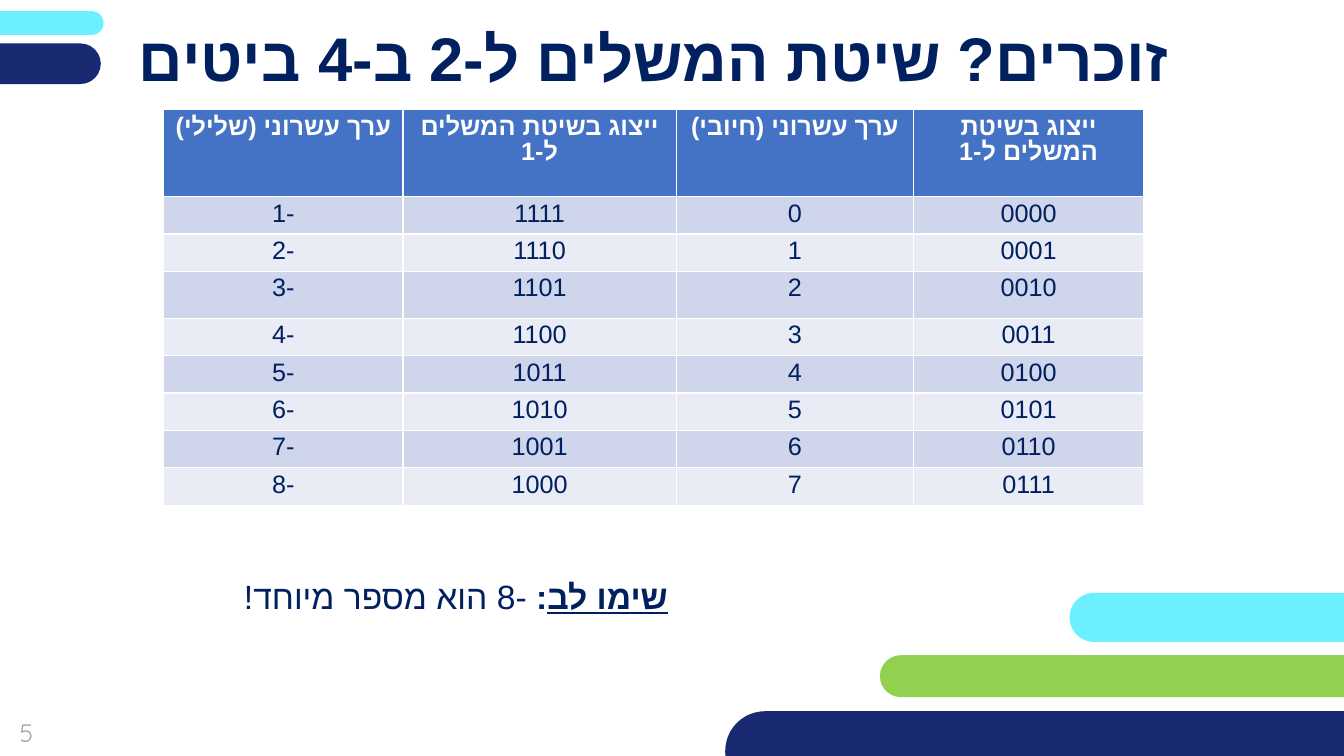
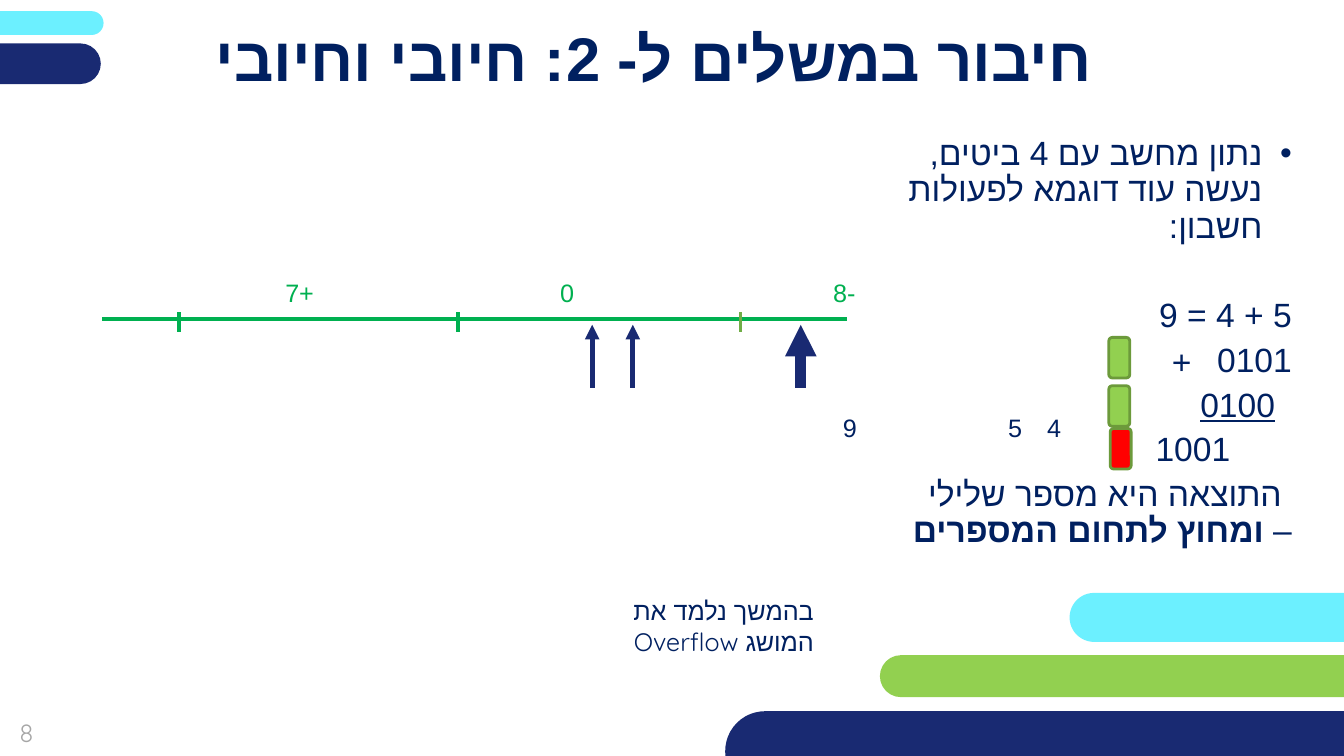
from pptx import Presentation
from pptx.dml.color import RGBColor
from pptx.enum.shapes import MSO_CONNECTOR, MSO_SHAPE
from pptx.enum.text import MSO_ANCHOR, MSO_AUTO_SIZE, PP_ALIGN
from pptx.oxml.ns import qn
from pptx.util import Pt
from lxml.etree import SubElement

COLORS = {
    "ink": "002060", "navy": "192A72", "cyan": "6CF0FF", "lime": "92D050",
    "moss": "6C9A3B", "red": "FF0000", "axis": "00B050", "olive": "70AD47",
    "gray": "A6A6A6", "white": "FFFFFF", "head": "4472C4",
    "odd": "CFD5EA", "even": "E9EBF5",
}
FONT = "Quicksand"
HEBREW = "Arial"
BANDS = [
    ("navy", 518, 508, 472, 57),
    ("cyan", 764, 423.5, 275, 35),
    ("cyan", -96, 8, 170, 17),
    ("navy", -162, 31, 234, 29),
    ("lime", 628.5, 468, 375, 30),
]


def color(name):
    return RGBColor.from_string(COLORS[name])


def style(para, size, tint="ink", bold=False, align=PP_ALIGN.RIGHT, rtl=True):
    para.alignment = align
    if rtl:
        para._p.get_or_add_pPr().set("rtl", "1")
    for run in para.runs:
        font = run.font
        font.name, font.size, font.bold = FONT, Pt(size), bold
        font.color.rgb = color(tint)
        SubElement(run._r.get_or_add_rPr(), qn("a:cs"), typeface=HEBREW)


def place(shape, box):
    shape.left, shape.top, shape.width, shape.height = map(Pt, box)


def add_text(slide, box, text, size, tint="ink", align=PP_ALIGN.RIGHT, rtl=True,
             anchor=MSO_ANCHOR.TOP):
    frame = slide.shapes.add_textbox(*map(Pt, box)).text_frame
    frame.word_wrap = True
    frame.vertical_anchor = anchor
    frame.text = text
    style(frame.paragraphs[0], size, tint, align=align, rtl=rtl)
    return frame


def add_label(slide, x, y, text, size=18, tint="ink"):
    add_text(slide, (x - 20, y - 15, 40, 30), text, size, tint,
             PP_ALIGN.CENTER, anchor=MSO_ANCHOR.MIDDLE)


def add_pill(slide, box, fill, line=None):
    pill = slide.shapes.add_shape(MSO_SHAPE.ROUNDED_RECTANGLE, *map(Pt, box))
    pill.shadow.inherit = False
    pill.fill.solid()
    pill.fill.fore_color.rgb = color(fill)
    if line:
        pill.line.color.rgb = color(line)
        pill.line.width = Pt(2)
    else:
        pill.line.fill.background()
    return pill


def add_line(slide, start, end, tint, width, arrow=False):
    line = slide.shapes.add_connector(
        MSO_CONNECTOR.STRAIGHT, *map(Pt, start + end))
    line.line.color.rgb = color(tint)
    line.line.width = Pt(width)
    if arrow:
        SubElement(line.line._get_or_add_ln(), qn("a:tailEnd"), type="triangle")
    SubElement(line._element.spPr, qn("a:effectLst"))


def add_slide(prs, layout, title, number):
    slide = prs.slides.add_slide(prs.slide_layouts[layout])
    for tint, *box in BANDS:
        add_pill(slide, box, tint).adjustments[0] = 0.5
    add_text(slide, (-13, 503, 64, 41), number, 18, "gray", PP_ALIGN.CENTER,
             False, MSO_ANCHOR.MIDDLE)
    head = slide.shapes.title
    place(head, (81, 12, 772, 57))
    frame = head.text_frame
    frame.auto_size = MSO_AUTO_SIZE.NONE
    frame.margin_left = frame.margin_right = 0
    frame.margin_top = frame.margin_bottom = 0
    frame.vertical_anchor = MSO_ANCHOR.MIDDLE
    frame.text = title
    style(frame.paragraphs[0], 44, bold=True, align=PP_ALIGN.CENTER)
    return slide


def add_values(slide, box):
    header = ["ערך עשרוני (שלילי)", "ייצוג בשיטת המשלים ל-1",
              "ערך עשרוני (חיובי)", "ייצוג בשיטת המשלים ל-1"]
    rows = [header] + [
        [f"-{n + 1}", f"{15 - n:04b}", str(n), f"{n:04b}"] for n in range(8)]
    table = slide.shapes.add_table(len(rows), 4, *map(Pt, box)).table
    for col, width in zip(table.columns, (0.244, 0.279, 0.242, 0.235)):
        col.width = Pt(round(box[2] * width, 1))
    for i, row in enumerate(rows):
        table.rows[i].height = Pt({0: 62, 3: 33.6}.get(i, 25.4))
        fill = "head" if i == 0 else "odd" if i % 2 else "even"
        for j, text in enumerate(row):
            cell = table.cell(i, j)
            cell.fill.solid()
            cell.fill.fore_color.rgb = color(fill)
            cell.text = text
            para = cell.text_frame.paragraphs[0]
            para.line_spacing = 0.9
            style(para, 18, "ink" if i else "white", i == 0, PP_ALIGN.CENTER)


def add_note(slide, box):
    para = add_text(slide, box, "שימו לב", 24).paragraphs[0]
    for text in (": ", "-8 הוא מספר מיוחד!"):
        para.add_run().text = text
    style(para, 24)
    lead, colon, rest = para.runs
    lead.font.bold = colon.font.bold = True
    lead.font.underline = True


def add_sum(slide, box):
    body = slide.placeholders[1]
    place(body, box)
    frame = body.text_frame
    frame.auto_size = MSO_AUTO_SIZE.NONE
    lines = [
        ("נתון מחשב עם 4 ביטים, נעשה עוד דוגמא לפעולות חשבון:", 21, -21),
        ("5 + 4 = 9", 0, 0),
        ("0101", 0, 0),
        ("0100", 12, 0),
        ("1001", 44, 0),
        ("התוצאה היא מספר שלילי – ", 0, 7),
    ]
    for i, (text, margin, indent) in enumerate(lines):
        para = frame.paragraphs[0] if i == 0 else frame.add_paragraph()
        para.text = text
        if i == 5:
            para.add_run().text = "ומחוץ לתחום המספרים"
        style(para, 24)
        para.line_spacing = 0.9
        para.space_before = Pt(32 if i == 1 else 0)
        para.space_after = Pt(6)
        props = para._p.get_or_add_pPr()
        props.set("marL", str(Pt(margin)))
        props.set("indent", str(Pt(indent)))
        if i:
            SubElement(props, qn("a:buNone"))
    frame.paragraphs[3].runs[0].font.underline = True
    frame.paragraphs[5].runs[1].font.bold = True
    left, top = box[:2]
    add_label(slide, left + 206, top + 164, "+", 24)
    for x, y, fill in ((155, 212, "red"), (154, 181.5, "lime"), (154, 147, "lime")):
        add_pill(slide, (left + x, top + y, 15, 29), fill, "moss")


def add_axis(slide, box):
    left, top, width, _ = box
    add_line(slide, (left, top), (left + width, top), "axis", 2.5)
    for x, tint in ((55, "axis"), (254, "axis"), (456, "olive")):
        add_line(slide, (left + x, top - 5), (left + x, top + 9), tint, 2.5)
    for x, text in ((530, "-8"), (332, "0"), (141, "+7")):
        add_label(slide, left + x, top - 19, text, tint="axis")
    for x, thick in ((350, 3.5), (379, 3.5), (499, 7.5)):
        add_line(slide, (left + x, top + 49), (left + x, top + 4), "navy", thick, True)
    for x, text in ((680, "4"), (652, "5"), (534, "9")):
        add_label(slide, left + x, top + 77, text)


def main():
    prs = Presentation()
    prs.slide_width, prs.slide_height = Pt(960), Pt(540)

    table = add_slide(prs, 5, "זוכרים? שיטת המשלים ל-2 ב-4 ביטים", "5")
    add_values(table, (117, 78.5, 700, 273.4))
    add_note(table, (81, 407.5, 403, 36))

    adding = add_slide(prs, 1, "חיבור במשלים ל- 2: חיובי וחיובי", "8")
    add_sum(adding, (638, 94, 292, 320))
    add_axis(adding, (73, 228, 532, 49))
    add_text(adding, (438.5, 422, 150, 51), "בהמשך נלמד את המושג Overflow", 18)

    prs.save("out.pptx")


if __name__ == "__main__":
    main()
